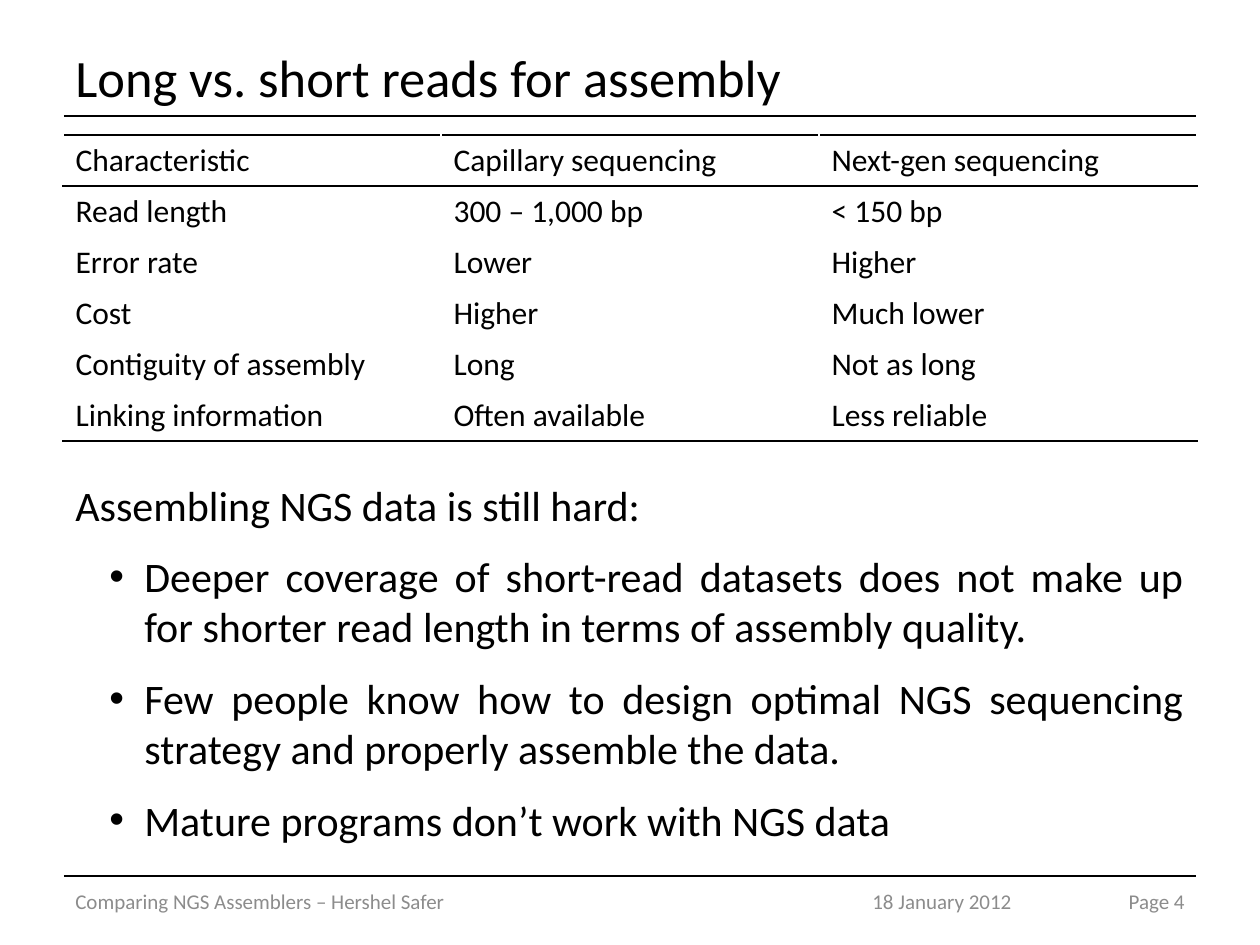
import pptx
import pptx.dml.color
import pptx.enum.shapes
import pptx.enum.text
import pptx.oxml
import pptx.oxml.ns
import pptx.util

ALIGN = pptx.enum.text.PP_ALIGN
ANCHOR = pptx.enum.text.MSO_ANCHOR
BLACK, WHITE, GREY = "000000", "FFFFFF", "8C8C8C"


def px(length):
    return pptx.util.Emu(round(length * 914400 / 126))


def colour(code):
    return pptx.dml.color.RGBColor.from_string(code)


def add_xml(parent, xml):
    namespace = pptx.oxml.ns.nsdecls("a")
    parent.append(pptx.oxml.parse_xml(xml.replace("NS", namespace, 1)))


class SlideWriter:
    font_name = "Calibri"

    def __init__(self, slide):
        self.slide = slide

    def paragraph(self, paragraph, wording, size, code=BLACK, **layout):
        for name, value in layout.items():
            setattr(paragraph, name, value)
        run = paragraph.add_run()
        run.text = wording
        values = {"name": self.font_name, "size": pptx.util.Pt(size), "bold": False}
        for name, value in values.items():
            setattr(run.font, name, value)
        run.font.color.rgb = colour(code)

    def bullet(self, paragraph, indent, hanging):
        properties = paragraph._p.get_or_add_pPr()
        properties.set("marL", str(px(indent)))
        properties.set("indent", str(-px(hanging)))
        add_xml(properties, '<a:buFont NS typeface="Arial"/>')
        add_xml(properties, '<a:buChar NS char="•"/>')

    def frame(self, left, top, width, height, anchor=ANCHOR.MIDDLE):
        box = self.slide.shapes.add_textbox(px(left), px(top), px(width), px(height))
        frame = box.text_frame
        frame.word_wrap = True
        frame.vertical_anchor = anchor
        return frame

    def text(self, box, wording, size, code=BLACK, alignment=ALIGN.LEFT):
        first = self.frame(*box).paragraphs[0]
        self.paragraph(first, wording, size, code, alignment=alignment)

    def body(self, box, lead, points, size):
        frame = self.frame(*box, anchor=ANCHOR.TOP)
        layout = {"alignment": ALIGN.JUSTIFY, "space_after": pptx.util.Pt(12)}
        self.paragraph(frame.paragraphs[0], lead, size, **layout)
        for point in points:
            paragraph = frame.add_paragraph()
            self.paragraph(paragraph, point, size, level=1, **layout)
            self.bullet(paragraph, 69, 35)

    def rule(self, left, right, y):
        line = self.slide.shapes.add_connector(
            pptx.enum.shapes.MSO_CONNECTOR.STRAIGHT, px(left), px(y), px(right), px(y))
        line.line.color.rgb = colour(BLACK)
        line.line.width = pptx.util.Pt(0.75)
        add_xml(line._element.spPr, "<a:effectLst NS/>")

    def borders(self, cell, codes):
        for side, code in codes.items():
            add_xml(cell._tc.get_or_add_tcPr(),
                    f'<a:ln{side} NS w="12700"><a:solidFill><a:srgbClr val="{code}"/>'
                    f'</a:solidFill></a:ln{side}>')

    def table(self, left, top, column_width, row_height, rows, size):
        count, columns = len(rows), len(rows[0])
        table = self.slide.shapes.add_table(
            count, columns, px(left), px(top),
            px(column_width * columns), px(row_height * count)).table
        table.first_row = table.horz_banding = False
        for column in table.columns:
            column.width = px(column_width)
        for r, row in enumerate(rows):
            table.rows[r].height = px(row_height)
            above = BLACK if r <= 1 else WHITE
            below = BLACK if r in (0, count - 1) else WHITE
            for c, wording in enumerate(row):
                cell = table.cell(r, c)
                self.paragraph(cell.text_frame.paragraphs[0], wording, size)
                self.borders(cell, {"L": WHITE, "R": WHITE, "T": above, "B": below})
                cell.fill.background()


def main():
    deck = pptx.Presentation()
    deck.slide_width, deck.slide_height = px(1260), px(945)
    writer = SlideWriter(deck.slides.add_slide(deck.slide_layouts[6]))

    for y in (116, 876):
        writer.rule(64, 1196, y)
    writer.text((63, 38, 1134, 77), "Long vs. short reads for assembly", 30)

    writer.table(63, 135, 378, 51, [
        ("Characteristic", "Capillary sequencing", "Next-gen sequencing"),
        ("Read length", "300 – 1,000 bp", "< 150 bp"),
        ("Error rate", "Lower", "Higher"),
        ("Cost", "Higher", "Much lower"),
        ("Contiguity of assembly", "Long", "Not as long"),
        ("Linking information", "Often available", "Less reliable"),
    ], 18)

    writer.body((63, 473, 1133, 387), "Assembling NGS data is still hard:", [
        "Deeper coverage of short-read datasets does not make up for shorter "
        "read length in terms of assembly quality.",
        "Few people know how to design optimal NGS sequencing strategy and "
        "properly assemble the data.",
        "Mature programs don’t work with NGS data",
    ], 24)

    footer = [
        (63, 756, "Comparing NGS Assemblers – Hershel Safer", ALIGN.LEFT),
        (828, 228, "18 January 2012", ALIGN.CENTER),
        (1066, 131, "Page 4", ALIGN.RIGHT),
    ]
    for left, width, wording, alignment in footer:
        writer.text((left, 876, width, 50), wording, 12, GREY, alignment)

    deck.save("out.pptx")


if __name__ == "__main__":
    main()
